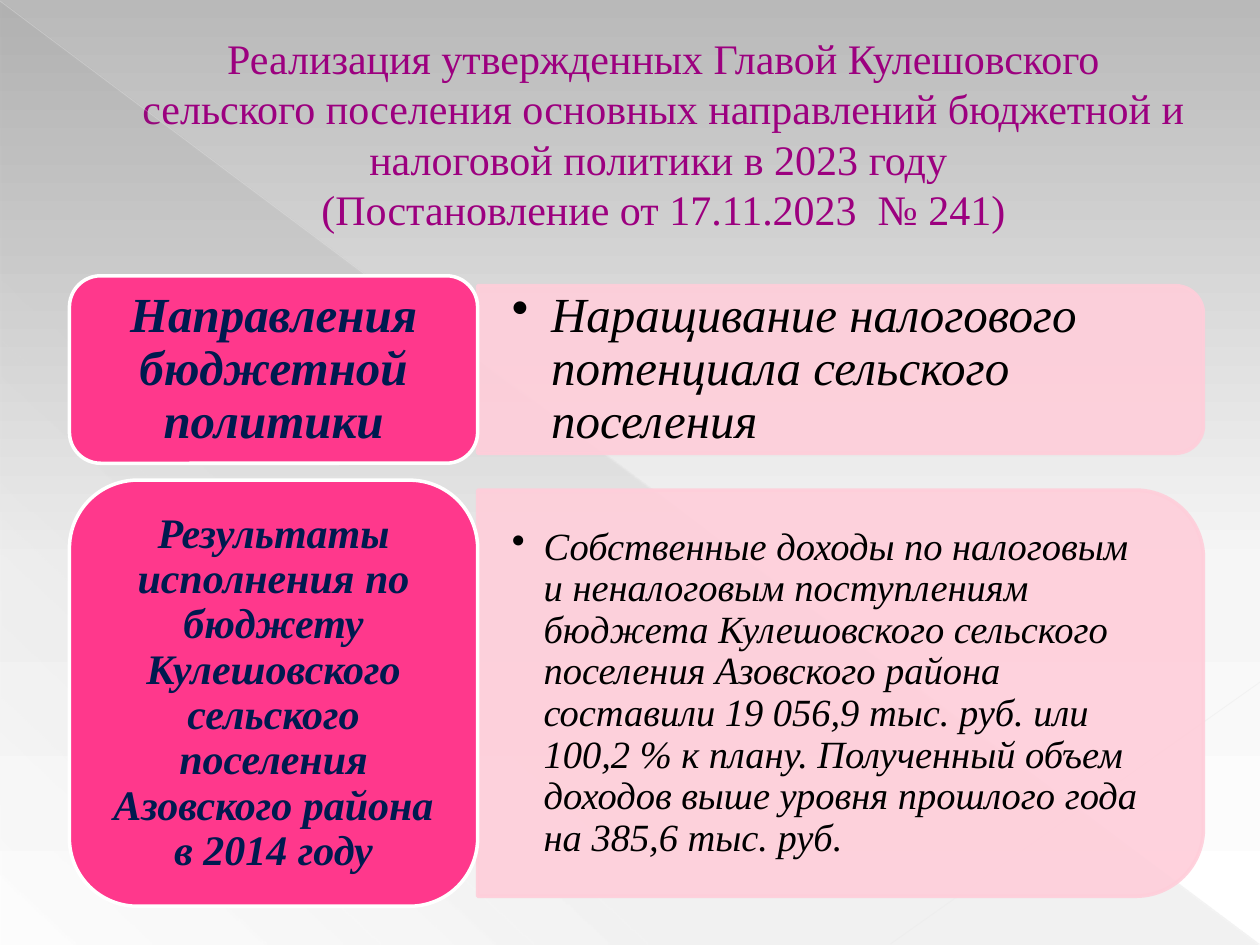
from lxml.etree import SubElement
from pptx import Presentation
from pptx.dml.color import RGBColor
from pptx.enum.shapes import MSO_CONNECTOR as Link, MSO_SHAPE as Shape
from pptx.enum.text import MSO_ANCHOR as Anchor, MSO_AUTO_SIZE as AutoSize, PP_ALIGN as Align
from pptx.oxml.ns import qn
from pptx.oxml.xmlchemy import OxmlElement
from pptx.util import Cm, Pt

FONT = "Times New Roman"
LABEL_LEFT, LABEL_WIDTH = 1.4, 8.23
PANEL_WIDTH, PANEL_INSET = 14.63, 0.2
CORNER_MARGIN = 0.05

ROWS = [
    dict(top=5.56, height=3.78, label_size=28, label_insets=(0.3, 0.15),
         label="Направления бюджетной политики",
         text_size=28, indent=0.79,
         text="Наращивание налогового потенциала сельского поселения"),
    dict(top=9.68, height=8.59, label_size=24, label_insets=(0.25, 0.13),
         label="Результаты исполнения по бюджету Кулешовского сельского поселения "
               "Азовского района в 2014 году",
         text_size=22, indent=0.64,
         text="Собственные доходы по налоговым и неналоговым поступлениям бюджета "
              "Кулешовского сельского поселения Азовского района составили 19 056,9 тыс. руб. "
              "или 100,2 % к плану. Полученный объем доходов выше уровня прошлого года "
              "на 385,6 тыс. руб."),
]


def rgb(value):
    return RGBColor.from_string(value)


def set_alpha(parent, percent):
    for color in parent.iter(qn("a:srgbClr")):
        SubElement(color, qn("a:alpha"), val=str(percent * 1000))


def set_gradient(fill, parent, stops, angle):
    fill.gradient()
    gradient = parent.find(".//" + qn("a:gradFill"))
    stop_list = gradient.find(qn("a:gsLst"))
    for stop in list(stop_list):
        stop_list.remove(stop)
    for position, value, alpha in stops:
        stop = SubElement(stop_list, qn("a:gs"), pos=str(position * 1000))
        SubElement(stop, qn("a:srgbClr"), val=value)
        set_alpha(stop, alpha)
    gradient.find(qn("a:lin")).set("ang", str(angle * 60000))


def set_insets(frame, horizontal, vertical):
    frame.margin_left = frame.margin_right = Cm(horizontal)
    frame.margin_top = frame.margin_bottom = Cm(vertical)


def style_text(frame, size, color, align, bold=False, italic=False, spacing=None):
    frame.word_wrap = True
    frame.auto_size = AutoSize.NONE
    frame.vertical_anchor = Anchor.MIDDLE
    for para in frame.paragraphs:
        para.alignment = align
        para.line_spacing = spacing
        for span in para.runs:
            font = span.font
            font.name, font.size = FONT, Pt(size)
            font.bold, font.italic = bold, italic
            font.color.rgb = rgb(color)


def add_box(page, kind, left, top, width, height, line=None):
    shape = page.shapes.add_shape(kind, Cm(left), Cm(top), Cm(width), Cm(height))
    shape.shadow.inherit = False
    if line:
        shape.line.color.rgb = rgb(line)
        shape.line.width = Pt(2)
    else:
        shape.line.fill.background()
    return shape


def add_ray(page, start, end, color, width, alpha):
    ray = page.shapes.add_connector(Link.STRAIGHT, *map(Cm, start + end))
    ray.line.color.rgb = rgb(color)
    ray.line.width = Pt(width)
    properties = ray._element.spPr
    set_alpha(properties, alpha)
    SubElement(properties, qn("a:effectLst"))


def add_backdrop(page):
    background = page.background.fill
    set_gradient(background, page.element,
                 [(0, "B9B9B9", 100), (60, "F6F6F6", 100), (100, "FFFFFF", 100)], 90)
    corner = add_box(page, Shape.RIGHT_TRIANGLE, 0.02, 0.04, 25.36, 19)
    set_gradient(corner.fill, corner._element.spPr,
                 [(0, "666666", 10), (70, "666666", 8), (100, "666666", 1)], 133)
    add_ray(page, (0, 0.02), (25.38, 19.03), "E8E8E8", 0.39, 35)
    add_ray(page, (25.4, 13.75), (17.95, 19.03), "EAEAEA", 0.47, 45)


def add_title(page, left, top, width, height):
    title = page.shapes.title
    title.left, title.top, title.width, title.height = map(Cm, (left, top, width, height))
    frame = title.text_frame
    frame.text = ("Реализация утвержденных Главой Кулешовского сельского поселения основных "
                  "направлений бюджетной и налоговой политики в 2023 году \v"
                  "(Постановление от 17.11.2023  № 241)")
    set_insets(frame, 0.2, 0.13)
    style_text(frame, 24, "9C007F", Align.CENTER)
    para = frame.paragraphs[0]
    properties = para._p.get_or_add_pPr()
    properties.set("marL", str(Cm(1.35)))
    properties.set("indent", "0")
    for line_break in para._p.iter(qn("a:br")):
        SubElement(line_break, qn("a:rPr"), sz="2400")
    for span in para.runs:
        outline = OxmlElement("a:ln")
        outline.set("w", str(Pt(0.5)))
        SubElement(SubElement(outline, qn("a:solidFill")), qn("a:srgbClr"), val="B12761")
        span._r.get_or_add_rPr().insert(0, outline)


def add_panel(page, left, top, width, height, row):
    shift = (width - height) / 2
    panel = add_box(page, Shape.ROUND_2_SAME_RECTANGLE,
                    left + shift, top - shift, height, width, "FFCEDA")
    panel.rotation = 90
    panel.fill.solid()
    panel.fill.fore_color.rgb = rgb("FFCEDA")
    set_alpha(panel._element.spPr, 90)

    margin = height * CORNER_MARGIN
    box = page.shapes.add_textbox(Cm(left), Cm(top + margin),
                                  Cm(width - margin), Cm(height - 2 * margin))
    frame = box.text_frame
    frame.text = row["text"]
    set_insets(frame, 0.69, 0.36)
    style_text(frame, row["text_size"], "000000", Align.LEFT, italic=True, spacing=0.9)
    properties = frame.paragraphs[0]._p.get_or_add_pPr()
    properties.set("marL", str(Cm(row["indent"])))
    properties.set("indent", str(-Cm(row["indent"])))
    SubElement(properties, qn("a:buChar"), char="•")


def add_label(page, left, top, width, height, row):
    label = add_box(page, Shape.ROUNDED_RECTANGLE, left, top, width, height, "FFFFFF")
    label.fill.solid()
    label.fill.fore_color.rgb = rgb("FF388C")
    frame = label.text_frame
    frame.text = row["label"]
    set_insets(frame, *row["label_insets"])
    style_text(frame, row["label_size"], "001A4F", Align.CENTER,
               bold=True, italic=True, spacing=0.9)


def add_row(page, left, top, height, row):
    add_panel(page, left + LABEL_WIDTH, top + PANEL_INSET,
              PANEL_WIDTH, height - 2 * PANEL_INSET, row)
    add_label(page, left, top, LABEL_WIDTH, height, row)


def main():
    deck = Presentation()
    deck.slide_width, deck.slide_height = Cm(25.4), Cm(19.05)
    page = deck.slides.add_slide(deck.slide_layouts[5])
    add_backdrop(page)
    add_title(page, 1.27, 0.74, 22.86, 3.89)
    for row in ROWS:
        add_row(page, LABEL_LEFT, row["top"], row["height"], row)
    deck.save("out.pptx")


if __name__ == "__main__":
    main()
